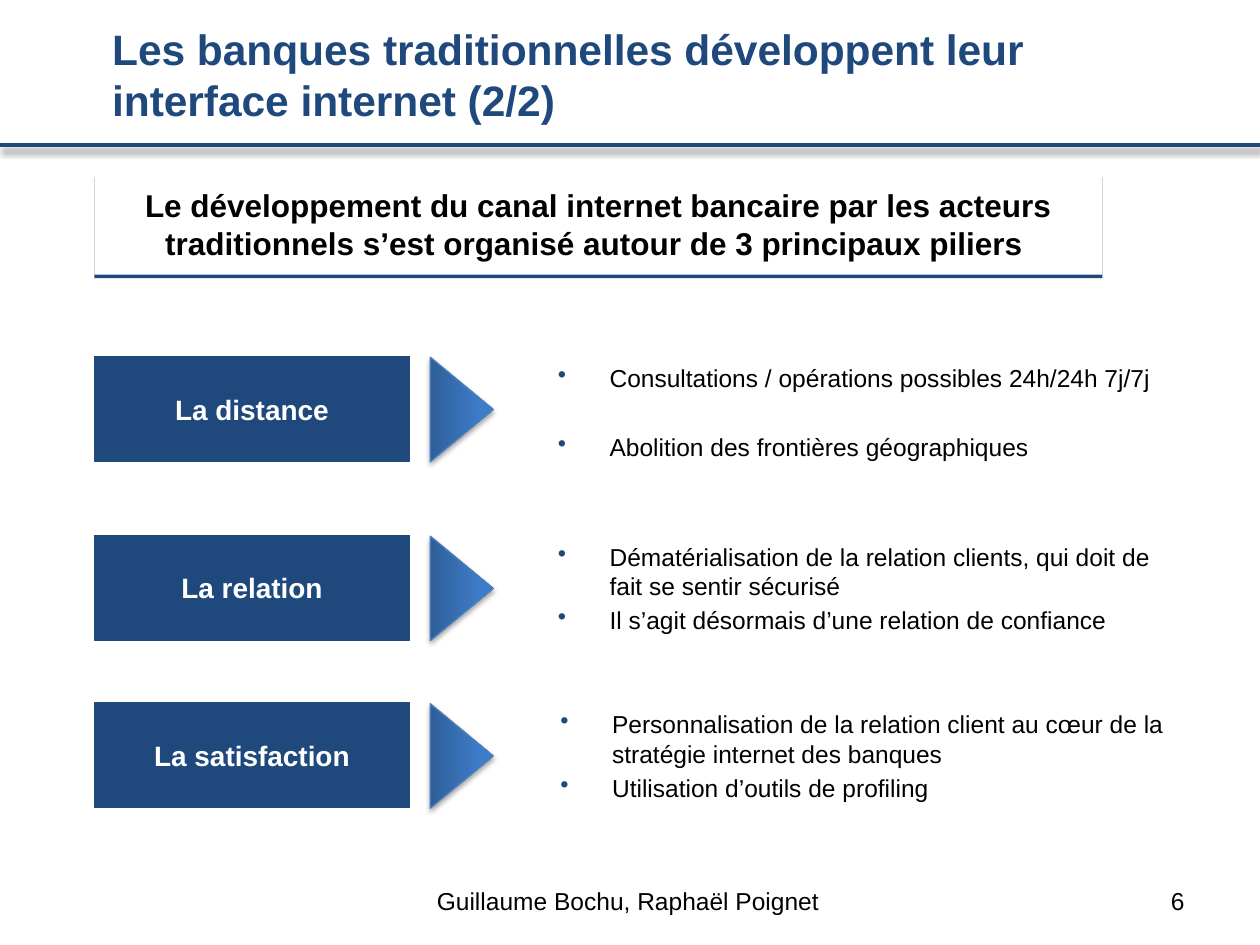
from lxml.etree import SubElement
from pptx import Presentation
from pptx.dml.color import RGBColor
from pptx.enum.shapes import MSO_CONNECTOR, MSO_SHAPE
from pptx.enum.text import MSO_ANCHOR, MSO_AUTO_SIZE, PP_ALIGN
from pptx.oxml.ns import qn
from pptx.util import Inches, Pt

COLORS = {
    "navy": "1F497D",
    "white": "FFFFFF",
    "black": "000000",
    "arrow_dark": "2F5F99",
    "arrow_mid": "3D7CC7",
    "arrow_light": "3A7CCB",
    "arrow_edge": "4B7EBC",
}

PILLARS = [
    ("La distance", 2.83, 4.33, 22.8, [
        "Consultations / opérations possibles 24h/24h 7j/7j",
        "Abolition des frontières géographiques",
    ]),
    ("La relation", 4.25, 4.33, 2.8, [
        "Dématérialisation de la relation clients, qui doit de fait se sentir sécurisé",
        "Il s’agit désormais d’une relation de confiance",
    ]),
    ("La satisfaction", 5.58, 4.35, 2.8, [
        "Personnalisation de la relation client au cœur de la stratégie internet des banques",
        "Utilisation d’outils de profiling",
    ]),
]


def rgb(name):
    return RGBColor.from_string(COLORS[name])


def format_para(para, size, color, bold=False, align=PP_ALIGN.LEFT):
    para.alignment = align
    for span in para.runs:
        span.font.name = "Arial"
        span.font.size = Pt(size)
        span.font.bold = bold
        span.font.color.rgb = rgb(color)


def add_shadow(shape, color, alpha, blur, distance):
    properties = shape._element.spPr
    effects = properties.find(qn("a:effectLst"))
    if effects is None:
        effects = SubElement(properties, qn("a:effectLst"))
    shadow = SubElement(effects, qn("a:outerShdw"), blurRad=str(Pt(blur)),
                        dist=str(Pt(distance)), dir="5400000", rotWithShape="0")
    tint = SubElement(shadow, qn("a:srgbClr"), val=COLORS[color])
    SubElement(tint, qn("a:alpha"), val=str(alpha * 1000))


def add_title(slide, text):
    title = slide.shapes.title
    title.left, title.top = Inches(0.5), Inches(0.31)
    title.width, title.height = Inches(9), Inches(0.77)
    frame = title.text_frame
    frame.text = text
    frame.word_wrap = True
    frame.auto_size = MSO_AUTO_SIZE.NONE
    frame.vertical_anchor = MSO_ANCHOR.MIDDLE
    frame.margin_left = Inches(0.39)
    frame.margin_bottom = Inches(0.27)
    format_para(frame.paragraphs[0], 24.3, "navy", bold=True)


def add_rule(slide):
    rule = slide.shapes.add_connector(
        MSO_CONNECTOR.STRAIGHT, 0, Inches(1.15), Inches(10), Inches(1.15))
    rule.line.color.rgb = rgb("navy")
    rule.line.width = Pt(2)
    add_shadow(rule, "black", 40, 4, 3)


def add_box(slide, text, top, width, height, fill, color, size):
    box = slide.shapes.add_shape(
        MSO_SHAPE.RECTANGLE, Inches(0.75), Inches(top), Inches(width), Inches(height))
    box.shadow.inherit = False
    box.fill.solid()
    box.fill.fore_color.rgb = rgb(fill)
    frame = box.text_frame
    frame.text = text
    frame.word_wrap = True
    frame.vertical_anchor = MSO_ANCHOR.MIDDLE
    format_para(frame.paragraphs[0], size, color, bold=True, align=PP_ALIGN.CENTER)
    return box


def add_headline(slide, text):
    box = add_box(slide, text, 1.38, 8, 0.8, "white", "black", 18)
    box.line.fill.background()
    frame = box.text_frame
    frame.margin_top = frame.margin_bottom = Inches(0.1)
    frame.paragraphs[0].space_before = Pt(3.6)
    add_shadow(box, "navy", 100, 0, 2)


def add_pillar(slide, text, top):
    box = add_box(slide, text, top, 2.5, 0.83, "navy", "white", 16)
    box.line.color.rgb = rgb("navy")
    box.line.width = Pt(0.75)


def add_arrow(slide, top):
    arrow = slide.shapes.add_shape(
        MSO_SHAPE.ISOSCELES_TRIANGLE, Inches(3.25), Inches(top), Inches(0.83), Inches(0.5))
    arrow.rotation = 90
    arrow.shadow.inherit = False
    arrow.fill.gradient()
    arrow.fill.gradient_angle = 90
    stops = arrow._element.spPr.find(qn("a:gradFill")).find(qn("a:gsLst"))
    stops.clear()
    for position, name in ((0, "arrow_dark"), (80, "arrow_mid"), (100, "arrow_light")):
        stop = SubElement(stops, qn("a:gs"), pos=str(position * 1000))
        SubElement(stop, qn("a:srgbClr"), val=COLORS[name])
    arrow.line.color.rgb = rgb("arrow_edge")
    arrow.line.width = Pt(0.75)
    add_shadow(arrow, "black", 35, 3.1, 1.8)


def add_text_box(slide, left, top, width, height):
    box = slide.shapes.add_textbox(Inches(left), Inches(top), Inches(width), Inches(height))
    box.text_frame.word_wrap = True
    return box.text_frame


def add_bullets(slide, items, left, top, gap):
    frame = add_text_box(slide, left, top, 5, 0.92)
    frame.text = "\n".join(items)
    for index, para in enumerate(frame.paragraphs):
        format_para(para, 14, "black")
        para.space_before = Pt(gap if index else 2.8)
        properties = para._p.get_or_add_pPr()
        properties.set("marL", str(Inches(0.41)))
        properties.set("indent", str(-Inches(0.41)))
        bullet_color = SubElement(properties, qn("a:buClr"))
        SubElement(bullet_color, qn("a:srgbClr"), val=COLORS["navy"])
        SubElement(properties, qn("a:buChar"), char="•")


def add_footer(slide, text, left, width, align):
    frame = add_text_box(slide, left, 6.95, width, 0.4)
    frame.text = text
    frame.vertical_anchor = MSO_ANCHOR.MIDDLE
    format_para(frame.paragraphs[0], 14, "black", align=align)


def main():
    deck = Presentation()
    deck.slide_width, deck.slide_height = Inches(10), Inches(7.5)
    slide = deck.slides.add_slide(deck.slide_layouts[5])
    add_rule(slide)
    add_title(slide, "Les banques traditionnelles développent leur interface internet (2/2)")
    add_headline(slide, "Le développement du canal internet bancaire par les acteurs "
                        "traditionnels s’est organisé autour de 3 principaux piliers ")
    for name, top, bullet_left, gap, items in PILLARS:
        add_pillar(slide, name, top)
        add_arrow(slide, top + 0.17)
        add_bullets(slide, items, bullet_left, top, gap)
    add_footer(slide, "Guillaume Bochu, Raphaël Poignet", 3.32, 3.33, PP_ALIGN.CENTER)
    add_footer(slide, "6", 7.17, 2.33, PP_ALIGN.RIGHT)
    deck.save("out.pptx")


if __name__ == "__main__":
    main()
